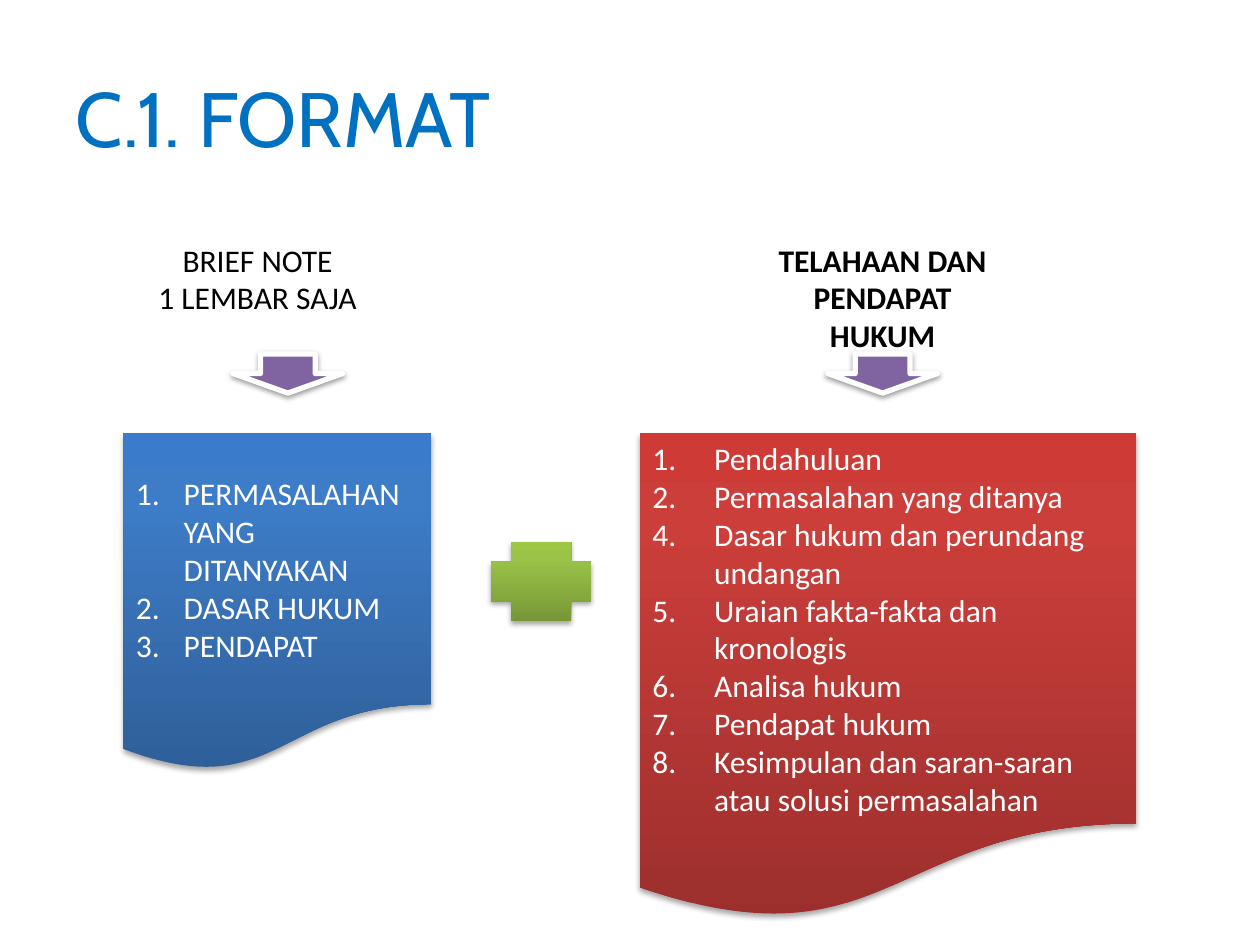
import copy

import pptx
import pptx.dml.color
import pptx.enum.shapes
import pptx.enum.text
import pptx.oxml
import pptx.oxml.ns
import pptx.util

Inches = pptx.util.Inches
Pt = pptx.util.Pt
RGBColor = pptx.dml.color.RGBColor
SHAPE = pptx.enum.shapes.MSO_SHAPE
ALIGN = pptx.enum.text.PP_ALIGN
ANCHOR = pptx.enum.text.MSO_ANCHOR

TITLE_BLUE = RGBColor(0x00, 0x70, 0xC0)
BLACK = RGBColor(0x00, 0x00, 0x00)
WHITE = RGBColor(0xFF, 0xFF, 0xFF)
PURPLE = RGBColor(0x80, 0x64, 0xA2)
# Gradient colours from the bottom edge to the top edge
BLUES = (RGBColor(0x2F, 0x5F, 0x99), RGBColor(0x3D, 0x7C, 0xC7), RGBColor(0x3A, 0x7C, 0xCB))
REDS = (RGBColor(0x9C, 0x2F, 0x2D), RGBColor(0xCB, 0x3E, 0x3A), RGBColor(0xCE, 0x3B, 0x37))
GREENS = (RGBColor(0x77, 0x97, 0x37), RGBColor(0x9B, 0xC3, 0x48), RGBColor(0x9D, 0xC7, 0x46))
GRADIENT_POSITIONS = (0, 0.8, 1)

BRIEF_ITEMS = ("PERMASALAHAN YANG DITANYAKAN", "DASAR HUKUM", "PENDAPAT")
STUDY_ITEMS = (
    "1.\tPendahuluan",
    "2.\tPermasalahan yang ditanya",
    "4.\tDasar hukum dan perundang undangan",
    "5.\tUraian fakta-fakta dan kronologis",
    "6.\tAnalisa hukum",
    "7.\tPendapat hukum",
    "8.\tKesimpulan dan saran-saran atau solusi permasalahan",
)


def add_drop_shadow(shape, opacity, distance):
    shape.shadow.inherit = False
    effects = shape._element.spPr.find(pptx.oxml.ns.qn("a:effectLst"))
    effects.append(pptx.oxml.parse_xml(
        f'<a:outerShdw {pptx.oxml.ns.nsdecls("a")} blurRad="{Pt(3.1)}" '
        f'dist="{Pt(distance)}" dir="5400000" rotWithShape="0">'
        f'<a:srgbClr val="000000"><a:alpha val="{opacity * 1000}"/></a:srgbClr>'
        '</a:outerShdw>'))


def add_gradient_shape(slide, kind, box, colors):
    shape = slide.shapes.add_shape(kind, *map(Inches, box))
    shape.fill.gradient()
    shape.fill.gradient_angle = 90
    stop_list = shape._element.spPr.find(".//" + pptx.oxml.ns.qn("a:gsLst"))
    stop_list.append(copy.deepcopy(stop_list[-1]))
    for stop, position, color in zip(shape.fill.gradient_stops, GRADIENT_POSITIONS, colors):
        stop.position = position
        stop.color.rgb = color
    shape.line.fill.background()
    add_drop_shadow(shape, 35, 1.8)
    return shape


def write_lines(frame, lines, color, alignment, bold=False):
    frame.word_wrap = True
    frame.text = "\n".join(lines)
    for paragraph in frame.paragraphs:
        paragraph.alignment = alignment
        paragraph.font.name = "Calibri"
        paragraph.font.size = Pt(18)
        paragraph.font.bold = bold
        paragraph.font.color.rgb = color


def add_document(slide, box, colors, items, indent, numbered):
    """Add a document shape with a hanging list, numbered automatically if asked."""
    shape = add_gradient_shape(slide, SHAPE.FLOWCHART_DOCUMENT, box, colors)
    frame = shape.text_frame
    frame.vertical_anchor = ANCHOR.MIDDLE
    write_lines(frame, items, WHITE, ALIGN.LEFT)
    for paragraph in frame.paragraphs:
        properties = paragraph._p.get_or_add_pPr()
        properties.set("marL", str(Inches(indent)))
        properties.set("indent", str(-Inches(indent)))
        if numbered:
            properties.append(pptx.oxml.parse_xml(
                f'<a:buAutoNum {pptx.oxml.ns.nsdecls("a")} type="arabicPeriod"/>'))


def add_heading(slide, box, lines, bold):
    frame = slide.shapes.add_textbox(*map(Inches, box)).text_frame
    write_lines(frame, lines, BLACK, ALIGN.CENTER, bold)
    frame.auto_size = pptx.enum.text.MSO_AUTO_SIZE.SHAPE_TO_FIT_TEXT


def add_down_arrow(slide, box):
    arrow = slide.shapes.add_shape(SHAPE.DOWN_ARROW, *map(Inches, box))
    arrow.fill.solid()
    arrow.fill.fore_color.rgb = PURPLE
    arrow.line.color.rgb = WHITE
    arrow.line.width = Pt(3)
    add_drop_shadow(arrow, 38, 1.6)


def format_title(slide, box):
    title = slide.shapes.title
    title.left, title.top, title.width, title.height = map(Inches, box)
    title.text_frame.text = "C.1. FORMAT"
    title.text_frame.vertical_anchor = ANCHOR.MIDDLE
    paragraph = title.text_frame.paragraphs[0]
    paragraph.alignment = ALIGN.LEFT
    paragraph.font.name = "Cabin"
    paragraph.font.size = Pt(44)
    paragraph.font.color.rgb = TITLE_BLUE


def main():
    presentation = pptx.Presentation()
    presentation.slide_width = Inches(10)
    presentation.slide_height = Inches(7.5)
    slide = presentation.slides.add_slide(presentation.slide_layouts.get_by_name("Title Only"))
    format_title(slide, (0.5, 0.3, 9, 1.25))
    add_document(slide, (5.08, 3.44, 3.94, 3.86), REDS, STUDY_ITEMS, 0.49, numbered=False)
    add_document(slide, (0.98, 3.44, 2.44, 2.68), BLUES, BRIEF_ITEMS, 0.38, numbered=True)
    add_gradient_shape(slide, SHAPE.CROSS, (3.9, 4.3, 0.79, 0.63), GREENS)
    add_heading(slide, (0.98, 1.86, 2.13, 0.71), ("BRIEF NOTE", "1 LEMBAR SAJA"), bold=False)
    add_heading(slide, (5.94, 1.86, 2.13, 1.01), ("TELAHAAN DAN PENDAPAT HUKUM",), bold=True)
    for left in (1.85, 6.57):
        add_down_arrow(slide, (left, 2.81, 0.87, 0.31))
    presentation.save("out.pptx")


if __name__ == "__main__":
    main()
